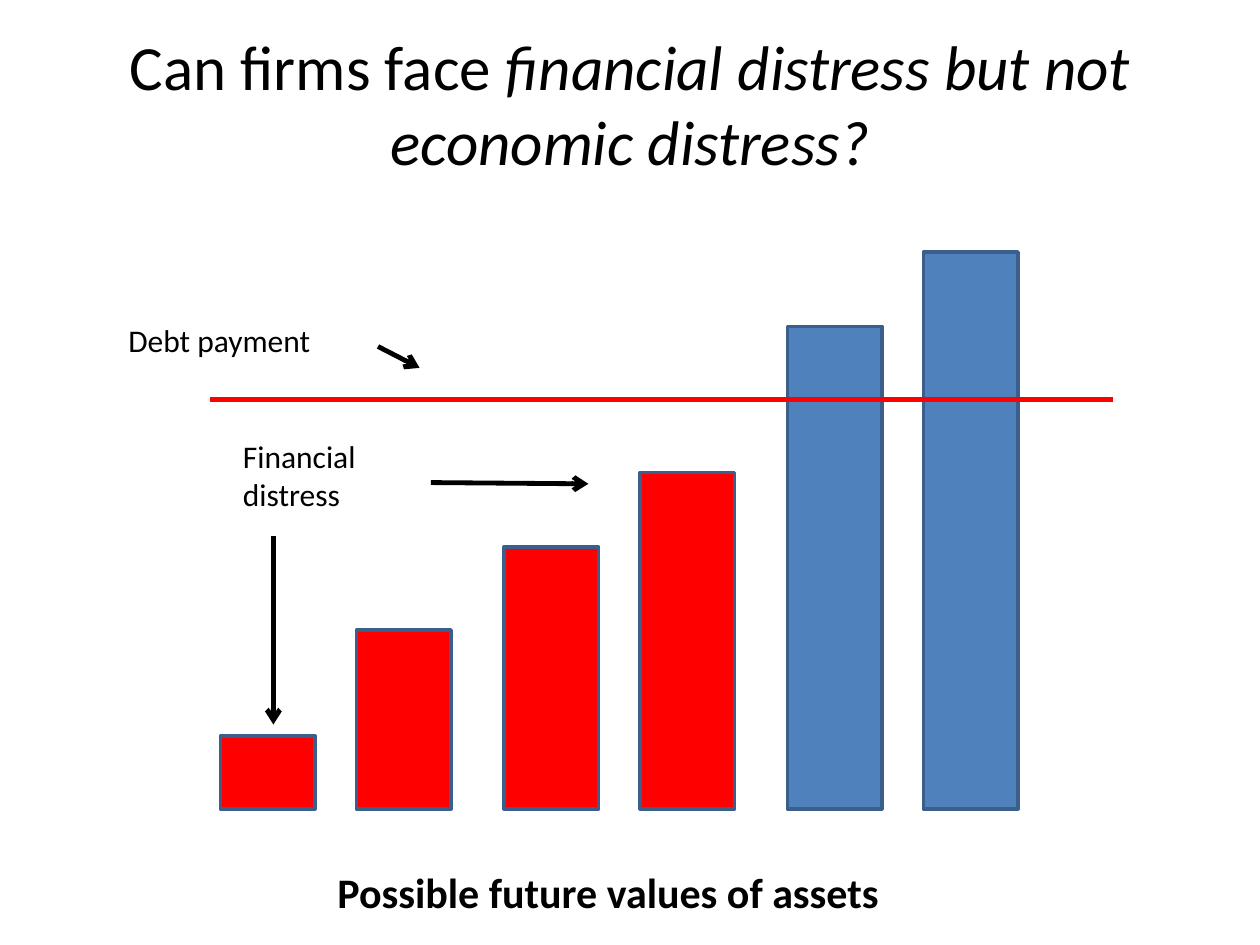
from pptx import Presentation
from pptx.dml.color import RGBColor
from pptx.enum.shapes import MSO_CONNECTOR as Connector, MSO_SHAPE as Shape
from pptx.enum.text import MSO_ANCHOR as Anchor, PP_ALIGN as Align
from pptx.oxml.ns import qn
from pptx.util import Inches, Pt
from lxml import etree

COLORS = {"text": "000000", "solvent": "4F81BD", "distress": "FF0000",
          "outline": "3A5F8C", "debt": "FF0000"}
FONT = "Calibri"

# Bars come in pairs: pitch of the pairs, and offset of the second bar
PAIR_PITCH, PAIR_OFFSET, BAR_WIDTH = 2.25, 1.08, 0.75
BAR_HEIGHTS = [0.58, 1.42, 2.08, 2.67, 3.83, 4.42]
DEBT_HEIGHT = 3.25


def color(name):
    return RGBColor.from_string(COLORS[name])


def add_text(slide, box, runs, size, bold=False, align=Align.LEFT, anchor=Anchor.TOP):
    """Add one paragraph from (text, italic) runs."""
    frame = slide.shapes.add_textbox(*map(Inches, box)).text_frame
    frame.word_wrap = True
    frame.vertical_anchor = anchor
    paragraph = frame.paragraphs[0]
    paragraph.alignment = align
    font = paragraph.font
    font.name, font.size, font.bold = FONT, Pt(size), bold
    font.color.rgb = color("text")
    for text, italic in runs:
        run = paragraph.add_run()
        run.text = text
        if italic:
            run.font.italic = True


def add_line(slide, start, end, color_name, width, arrow=False):
    line = slide.shapes.add_connector(Connector.STRAIGHT, *map(Inches, (*start, *end)))
    line.line.color.rgb = color(color_name)
    line.line.width = Pt(width)
    if arrow:
        etree.SubElement(line.line._get_or_add_ln(), qn("a:tailEnd"), type="arrow")
    etree.SubElement(line._element.spPr, qn("a:effectLst"))


def add_title(slide, box):
    runs = [("Can firms face ", False),
            ("financial distress but not economic distress?", True)]
    add_text(slide, box, runs, 36, align=Align.CENTER, anchor=Anchor.MIDDLE)


def add_bars(slide, box):
    """Asset values, red where they fall short of the debt payment."""
    left, top, _, height = box
    for index, value in enumerate(BAR_HEIGHTS):
        pair, second = divmod(index, 2)
        x = left + pair * PAIR_PITCH + second * PAIR_OFFSET
        bar = slide.shapes.add_shape(
            Shape.RECTANGLE, Inches(x), Inches(top + height - value),
            Inches(BAR_WIDTH), Inches(value))
        bar.shadow.inherit = False
        bar.fill.solid()
        bar.fill.fore_color.rgb = color("distress" if value < DEBT_HEIGHT else "solvent")
        bar.line.color.rgb = color("outline")
        bar.line.width = Pt(2)


def add_annotations(slide, box):
    """Debt line, labels and arrows over the bars."""
    left, top, width, height = box
    debt_y = top + height - DEBT_HEIGHT

    # Financial distress
    add_text(slide, (left + 0.08, debt_y + 0.25, 1.5, 0.71),
             [("Financial distress", False)], 18)
    add_line(slide, (left + 0.42, debt_y + 1.08), (left + 0.42, debt_y + 2.58),
             "text", 2.75, arrow=True)
    add_line(slide, (left + 1.67, debt_y + 0.66), (left + 2.92, debt_y + 0.67),
             "text", 2.75, arrow=True)

    # Debt payment
    add_line(slide, (left - 0.08, debt_y), (left + width + 0.75, debt_y), "debt", 3)
    add_text(slide, (left - 0.83, debt_y - 0.67, 2, 0.4), [("Debt payment", False)], 18)
    add_line(slide, (left + 1.25, debt_y - 0.42), (left + 1.58, debt_y - 0.25),
             "text", 2.75, arrow=True)


def add_caption(slide, box):
    add_text(slide, box, [("Possible future values of assets", False)], 24, bold=True)


def main():
    presentation = Presentation()
    presentation.slide_width, presentation.slide_height = Inches(10), Inches(7.5)
    slide = presentation.slides.add_slide(presentation.slide_layouts[6])
    chart_box = (1.75, 2, 6.33, 4.42)
    add_title(slide, (0.5, 0.3, 9, 1.03))
    add_bars(slide, chart_box)
    add_caption(slide, (2.58, 6.83, 5.5, 0.5))
    add_annotations(slide, chart_box)
    presentation.save("out.pptx")


if __name__ == "__main__":
    main()
